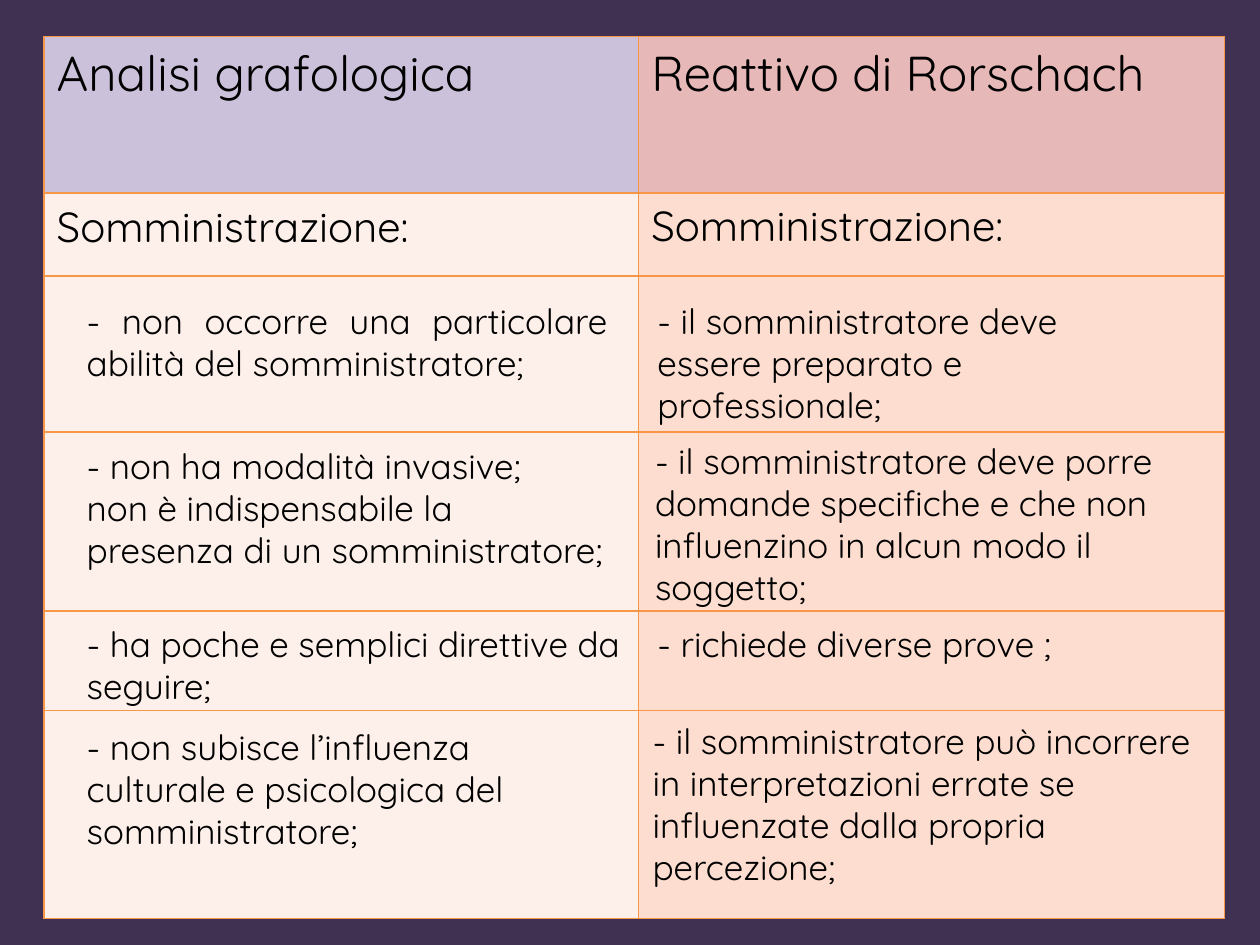
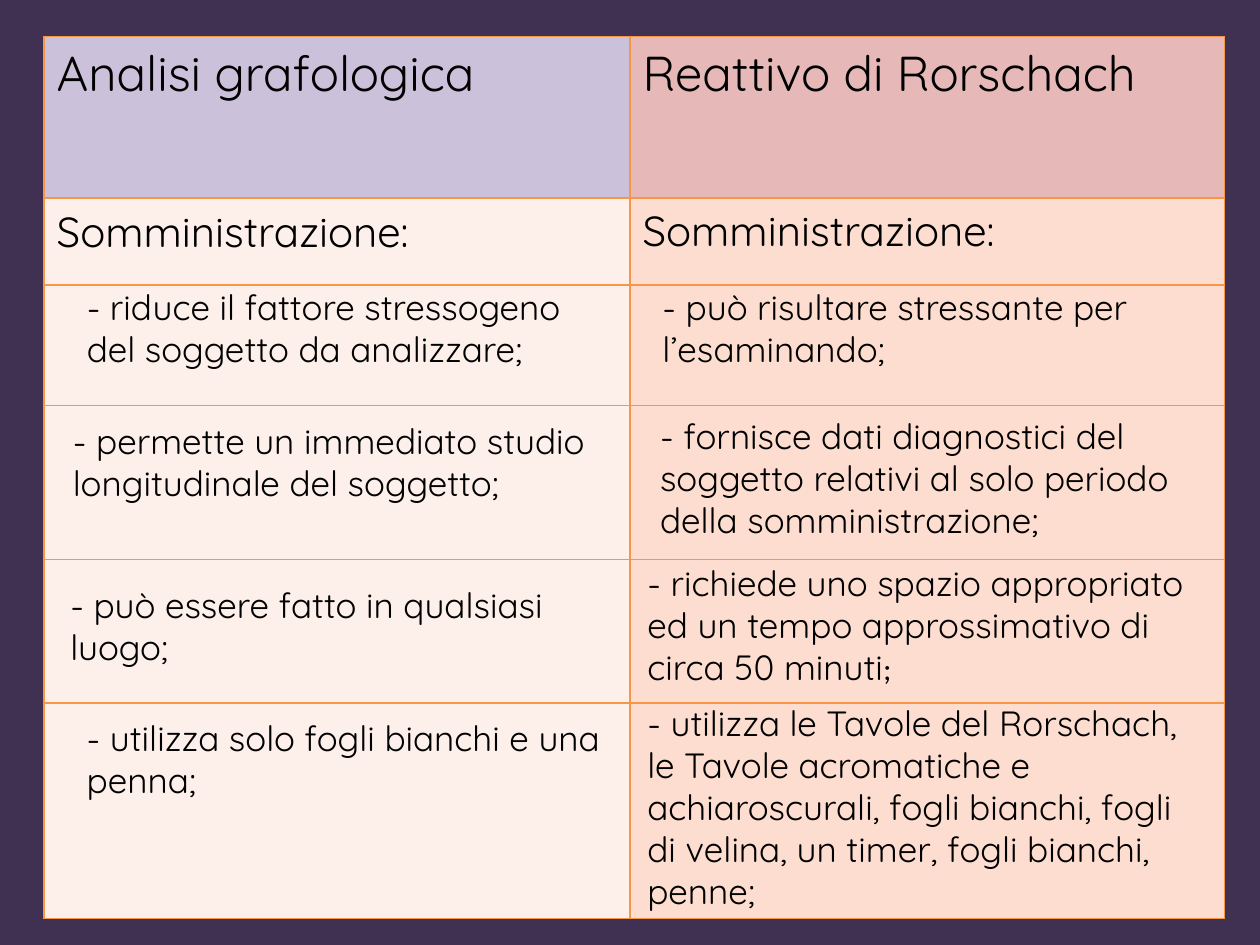
import pptx
import pptx.dml.color
import pptx.enum.text
import pptx.oxml
import pptx.oxml.ns
import pptx.util
from lxml import etree

Pt = pptx.util.Pt
RGBColor = pptx.dml.color.RGBColor
ALIGN = pptx.enum.text.PP_ALIGN
AUTO_SIZE = pptx.enum.text.MSO_AUTO_SIZE

PURPLE = RGBColor(0x40, 0x31, 0x52)
BLACK = RGBColor(0x00, 0x00, 0x00)
ORANGE = RGBColor(0xF7, 0x96, 0x46)
HEADER_FILLS = (RGBColor(0xCC, 0xC1, 0xDA), RGBColor(0xE6, 0xB9, 0xB8))
BODY_FILLS = (RGBColor(0xFD, 0xEF, 0xE9), RGBColor(0xFC, 0xDD, 0xCF))

HEADINGS = ("Analisi grafologica", "Reattivo di Rorschach")
SUBHEADING = "Somministrazione:"
TABLE_LEFT, TABLE_TOP = 25.2, 20.9
LINE_HEIGHT, BOX_MARGINS = 24.2, 7.2

HEADING = {"size": Pt(28), "name": "Quicksand"}
SUBHEAD = {"size": Pt(24), "name": "Quicksand"}
POINT = {"size": Pt(20), "name": "Quicksand"}
TAIL = {"size": Pt(18), "name": "Calibri"}
LOOSE_CELL = {"margin_top": 0, "margin_bottom": 0}
LOOSE_PARA = {"line_spacing": 1.15, "space_after": Pt(10)}

# Each point: left, top, width, number of lines, text, then optional formats.
PAGES = (
    {
        "columns": (339.8, 334.8),
        "rows": (89.3, 47.5, 89.3, 102.2, 56.9, 118.8),
        "points": (
            (42.5, 167.8, 311.8, 2,
             "- non occorre una particolare abilità del somministratore;",
             {"alignment": ALIGN.JUSTIFY}),
            (368.6, 167.8, 306, 3,
             "- il somministratore deve essere preparato e professionale;"),
            (42.5, 250.6, 319, 3,
             "- non ha modalità invasive;\n"
             "non è indispensabile la\vpresenza di un somministratore;"),
            (367.2, 247.7, 306, 4,
             "- il somministratore deve porre domande specifiche e che non "
             "influenzino in alcun modo il soggetto;"),
            (42.5, 352.1, 319, 2,
             "- ha poche e semplici direttive da seguire;"),
            (368.6, 352.1, 285.8, 1, "- richiede diverse prove ;"),
            (42.5, 411.1, 311.8, 3,
             "- non subisce l’influenza culturale e psicologica del "
             "somministratore;"),
            (365.8, 407.5, 323.3, 4,
             "- il somministratore può incorrere in interpretazioni errate se "
             "influenzate dalla propria percezione;"),
        ),
    },
    {
        "columns": (334.8, 339.8),
        "rows": (92.2, 49.7, 69.1, 87.8, 82.1, 123.1),
        "points": (
            (42.5, 159.8, 294.5, 2,
             "- riduce il fattore stressogeno del soggetto da analizzare;"),
            (371.5, 159.8, 300.2, 2,
             "- può risultare stressante per l’esaminando;"),
            (34.6, 236.2, 339.8, 2,
             "- permette un immediato studio longitudinale del soggetto;"),
            (370.1, 233.3, 334.8, 3,
             "- fornisce dati diagnostici del soggetto relativi al solo "
             "periodo della somministrazione;"),
            (33.1, 329.8, 330.5, 2,
             "- può essere fatto in qualsiasi luogo;"),
            (362.9, 317.5, 341.3, 3,
             "- richiede uno spazio appropriato ed un tempo approssimativo di "
             "circa 50 minuti", {}, ";"),
            (42.5, 406.1, 311.8, 2,
             "- utilizza solo fogli bianchi e una penna;"),
            (362.9, 397.4, 333.4, 5,
             "- utilizza le Tavole del Rorschach, le Tavole acromatiche e "
             "achiaroscurali, fogli bianchi, fogli di velina, un timer, fogli "
             "bianchi, penne;"),
        ),
    },
)


def set_formats(target, formats):
    for name, value in formats.items():
        setattr(target, name, value)


class Deck:
    """Holds the shared style and the page being filled."""

    def __init__(self):
        self.show = pptx.Presentation()
        self.show.slide_width = Pt(720)
        self.show.slide_height = Pt(540)
        background = self.show.slide_master.background.fill
        background.solid()
        background.fore_color.rgb = PURPLE
        self.page = None

    def add_page(self):
        self.page = self.show.slides.add_slide(self.show.slide_layouts[6])

    def style_span(self, span, font):
        set_formats(span.font, font)
        span.font.color.rgb = BLACK

    def fill_text(self, frame, text, font, para_format):
        frame.text = text
        for para in frame.paragraphs:
            set_formats(para, para_format)
            for span in para.runs:
                self.style_span(span, font)

    def add_borders(self, cell):
        properties = cell._tc.get_or_add_tcPr()
        for position, side in enumerate(("lnL", "lnR", "lnT", "lnB")):
            line = etree.Element(pptx.oxml.ns.qn(f"a:{side}"), w=str(Pt(1)))
            fill = etree.SubElement(line, pptx.oxml.ns.qn("a:solidFill"))
            etree.SubElement(fill, pptx.oxml.ns.qn("a:srgbClr"), val=str(ORANGE))
            properties.insert(position, line)

    def add_comparison(self, columns, rows):
        frame = self.page.shapes.add_table(
            len(rows), len(columns), Pt(TABLE_LEFT), Pt(TABLE_TOP),
            Pt(sum(columns)), Pt(sum(rows)))
        table = frame.table
        set_formats(table, {"first_row": False, "horz_banding": False})
        for column, width in zip(table.columns, columns):
            column.width = Pt(width)
        for number, (row, height) in enumerate(zip(table.rows, rows)):
            row.height = Pt(height)
            fills = BODY_FILLS if number else HEADER_FILLS
            for cell, color in zip(row.cells, fills):
                cell.fill.solid()
                cell.fill.fore_color.rgb = color
                self.add_borders(cell)
        for cell, heading in zip(table.rows[0].cells, HEADINGS):
            self.fill_text(cell.text_frame, heading, HEADING, {})
        left, right = table.rows[1].cells
        set_formats(left, LOOSE_CELL)
        self.fill_text(left.text_frame, SUBHEADING, SUBHEAD, LOOSE_PARA)
        self.fill_text(right.text_frame, SUBHEADING, SUBHEAD, {})

    def add_point(self, left, top, width, lines, text, para_format={}, tail=""):
        height = BOX_MARGINS + LINE_HEIGHT * lines
        box = self.page.shapes.add_textbox(
            Pt(left), Pt(top), Pt(width), Pt(height))
        frame = box.text_frame
        set_formats(frame, {"word_wrap": True,
                            "auto_size": AUTO_SIZE.SHAPE_TO_FIT_TEXT})
        self.fill_text(frame, text, POINT, para_format)
        if tail:
            span = frame.paragraphs[-1].add_run()
            span.text = tail
            self.style_span(span, TAIL)


def main():
    deck = Deck()
    for content in PAGES:
        deck.add_page()
        deck.add_comparison(content["columns"], content["rows"])
        for point in content["points"]:
            deck.add_point(*point)
    deck.show.save("out.pptx")


if __name__ == "__main__":
    main()
